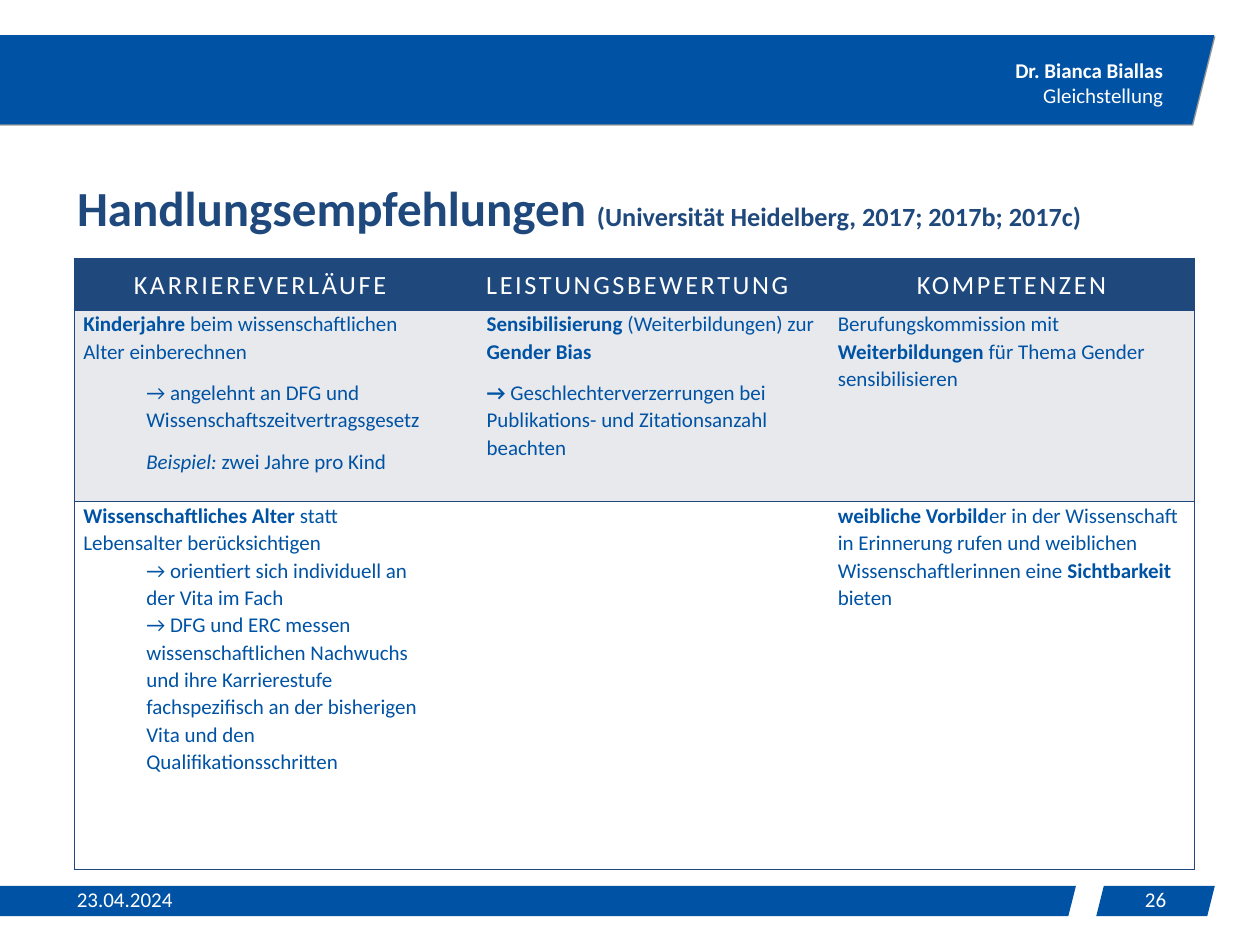
from lxml import etree
from pptx import Presentation
from pptx.dml.color import RGBColor
from pptx.enum.shapes import MSO_SHAPE
from pptx.enum.text import MSO_ANCHOR, PP_ALIGN
from pptx.oxml.ns import qn
from pptx.util import Cm, Pt

PARALLELOGRAM = MSO_SHAPE.PARALLELOGRAM
LEFT, CENTER, RIGHT = PP_ALIGN.LEFT, PP_ALIGN.CENTER, PP_ALIGN.RIGHT
TOP, MIDDLE, BOTTOM = MSO_ANCHOR.TOP, MSO_ANCHOR.MIDDLE, MSO_ANCHOR.BOTTOM

THEME = {
    "font": "Calibri", "blue": "0053A4", "navy": "1F497D", "grey": "E8E9EC",
    "white": "FFFFFF", "shadow": "000000",
    "title": 28, "source": 15, "heading": 15, "body": 12,
}

TITLE = "Handlungsempfehlungen "
SOURCE = "(Universität Heidelberg, 2017; 2017b; 2017c)"
SENDER = [("Dr. Bianca Biallas", True), ("Gleichstellung", False)]
DATE, PAGE = "23.04.2024", "26"

HEADINGS = ["KARRIEREVERLÄUFE", "LEISTUNGSBEWERTUNG", "KOMPETENZEN"]
# indent (cm), space after (pt), runs of (text, style)
RECOMMENDATIONS = [
    [
        [
            (0, 8, [("Kinderjahre", "b"), (" beim wissenschaftlichen Alter einberechnen", "")]),
            (1.27, 8, [("→ angelehnt an DFG und Wissenschaftszeitvertragsgesetz", "")]),
            (1.27, 8, [("Beispiel: ", "i"), ("zwei Jahre pro Kind", "")]),
        ],
        [
            (0.64, 8, [("Sensibilisierung", "b"), (" (Weiterbildungen) zur ", ""),
                       ("Gender Bias", "b")]),
            (0.64, 8, [("→ ", "b"), ("Geschlechterverzerrungen bei Publikations- "
                                     "und Zitationsanzahl beachten", "")]),
        ],
        [
            (0, 8, [("Berufungskommission mit ", ""), ("Weiterbildungen", "b"),
                    (" für Thema Gender sensibilisieren", "")]),
        ],
    ],
    [
        [
            (0, 0, [("Wissenschaftliches Alter ", "b"),
                    ("statt Lebensalter berücksichtigen", "")]),
            (1.27, 0, [("→ orientiert sich individuell an der Vita im Fach", "")]),
            (1.27, 8, [("→ DFG und ERC messen wissenschaftlichen Nachwuchs und ihre "
                        "Karrierestufe fachspezifisch an der bisherigen Vita und den "
                        "Qualifikationsschritten", "")]),
        ],
        [],
        [
            (0, 8, [("weibliche Vorbild", "b"),
                    ("er in der Wissenschaft in Erinnerung rufen und weiblichen "
                     "Wissenschaftlerinnen eine ", ""),
                    ("Sichtbarkeit ", "b"), ("bieten", "")]),
        ],
    ],
]

HEADER_BAR = (-0.51, 0.71, 24.99, 1.8)
FOOTER_BARS = [(-0.51, 17.86, 22.2, 0.61), (22.1, 17.86, 2.39, 0.61)]
SENDER_AT = (20.17, 1.04, 3.53, 1.27)
TITLE_AT = (1.3, 3.33, 22.81, 1.57)
DATE_AT = (1.3, 17.73, 2.79, 0.8)
PAGE_AT = (22.1, 17.73, 2.39, 0.8)
TABLE_AT = (1.5, 5.21)
COLUMN_WIDTHS = [7.49, 7.72, 7.37]
ROW_HEIGHTS = [1.04, 3.86, 7.42]
CELL_INSET = 0.18


def color(key):
    return RGBColor.from_string(THEME[key])


def cm(lengths):
    return [Cm(length) for length in lengths]


def set_font(paragraph, size, key, bold=None):
    font = paragraph.font
    font.name = THEME["font"]
    font.color.rgb = color(key)
    font.bold = bold
    if size:
        font.size = Pt(THEME[size])


def add_bar(slide, place):
    bar = slide.shapes.add_shape(PARALLELOGRAM, *cm(place))
    bar.shadow.inherit = False
    bar.fill.solid()
    bar.fill.fore_color.rgb = color("blue")
    bar.line.fill.background()
    return bar


def add_drop_shadow(bar):
    effects = bar._element.spPr.find(qn("a:effectLst"))
    shadow = etree.SubElement(effects, qn("a:outerShdw"), blurRad="0",
                              dist=str(Pt(1)), dir="2700000", algn="tl")
    tone = etree.SubElement(shadow, qn("a:srgbClr"), val=THEME["shadow"])
    etree.SubElement(tone, qn("a:alpha"), val="40000")


def add_label(slide, place, lines, align, anchor, wrap=True, after=None):
    frame = slide.shapes.add_textbox(*cm(place)).text_frame
    frame.word_wrap = wrap
    frame.vertical_anchor = anchor
    for index, (text, bold) in enumerate(lines):
        paragraph = frame.add_paragraph() if index else frame.paragraphs[0]
        paragraph.add_run().text = text
        paragraph.alignment = align
        paragraph.space_after = after
        set_font(paragraph, "body", "white", bold)


def fill_title(slide):
    title = slide.shapes.title
    title.left, title.top, title.width, title.height = cm(TITLE_AT)
    title.text_frame.vertical_anchor = BOTTOM
    paragraph = title.text_frame.paragraphs[0]
    paragraph.alignment = LEFT
    for text, size in ((TITLE, "title"), (SOURCE, "source")):
        run = paragraph.add_run()
        run.text = text
        run.font.size = Pt(THEME[size])
    set_font(paragraph, None, "navy", True)


def set_cell(cell, fill, lined_sides, vertical_inset):
    properties = cell._tc.get_or_add_tcPr()
    for side in "LRTB":
        line = etree.SubElement(properties, qn("a:ln" + side), w=str(Pt(1)))
        if side in lined_sides:
            solid = etree.SubElement(line, qn("a:solidFill"))
            etree.SubElement(solid, qn("a:srgbClr"), val=THEME["navy"])
        else:
            etree.SubElement(line, qn("a:noFill"))
    cell.fill.solid()
    cell.fill.fore_color.rgb = color(fill)
    cell.margin_left = cell.margin_right = Cm(CELL_INSET)
    cell.margin_top = cell.margin_bottom = Cm(vertical_inset)


def write_heading(cell, text):
    paragraph = cell.text_frame.paragraphs[0]
    run = paragraph.add_run()
    run.text = text
    run._r.get_or_add_rPr().set("spc", "150")
    paragraph.alignment = CENTER
    paragraph.line_spacing = 1.07
    set_font(paragraph, "heading", "white")


def write_advice(cell, advice):
    frame = cell.text_frame
    for index, (indent, after, runs) in enumerate(advice):
        paragraph = frame.add_paragraph() if index else frame.paragraphs[0]
        properties = paragraph._p.get_or_add_pPr()
        properties.set("marL", str(Cm(indent)))
        properties.set("indent", "0")
        paragraph.line_spacing = 1.07
        paragraph.space_after = Pt(after)
        for text, style in runs:
            run = paragraph.add_run()
            run.text = text
            run.font.bold = style == "b"
            run.font.italic = style == "i"
        set_font(paragraph, "body", "blue")


def add_recommendations(slide):
    rows, columns = len(ROW_HEIGHTS), len(COLUMN_WIDTHS)
    size = (sum(COLUMN_WIDTHS), sum(ROW_HEIGHTS))
    table = slide.shapes.add_table(rows, columns, *cm(TABLE_AT + size)).table
    table.first_row = table.horz_banding = False
    for column, width in zip(table.columns, COLUMN_WIDTHS):
        column.width = Cm(width)
    for row, height in zip(table.rows, ROW_HEIGHTS):
        row.height = Cm(height)
    fills = ["navy", "grey", "white"]
    for r in range(rows):
        for c in range(columns):
            cell = table.cell(r, c)
            sides = "TB" + ("L" if c == 0 else "") + ("R" if c == columns - 1 else "")
            set_cell(cell, fills[r], sides, 0 if r else CELL_INSET)
            if r:
                write_advice(cell, RECOMMENDATIONS[r - 1][c])
            else:
                write_heading(cell, HEADINGS[c])


def main():
    deck = Presentation()
    deck.slide_width, deck.slide_height = Cm(25.4), Cm(19.05)
    slide = deck.slides.add_slide(deck.slide_layouts[5])
    for place in FOOTER_BARS:
        add_bar(slide, place)
    add_drop_shadow(add_bar(slide, HEADER_BAR))
    add_label(slide, SENDER_AT, SENDER, RIGHT, TOP, wrap=False)
    fill_title(slide)
    add_label(slide, DATE_AT, [(DATE, None)], LEFT, MIDDLE, after=Pt(6))
    add_label(slide, PAGE_AT, [(PAGE, None)], CENTER, MIDDLE, after=Pt(6))
    add_recommendations(slide)
    deck.save("out.pptx")


if __name__ == "__main__":
    main()
